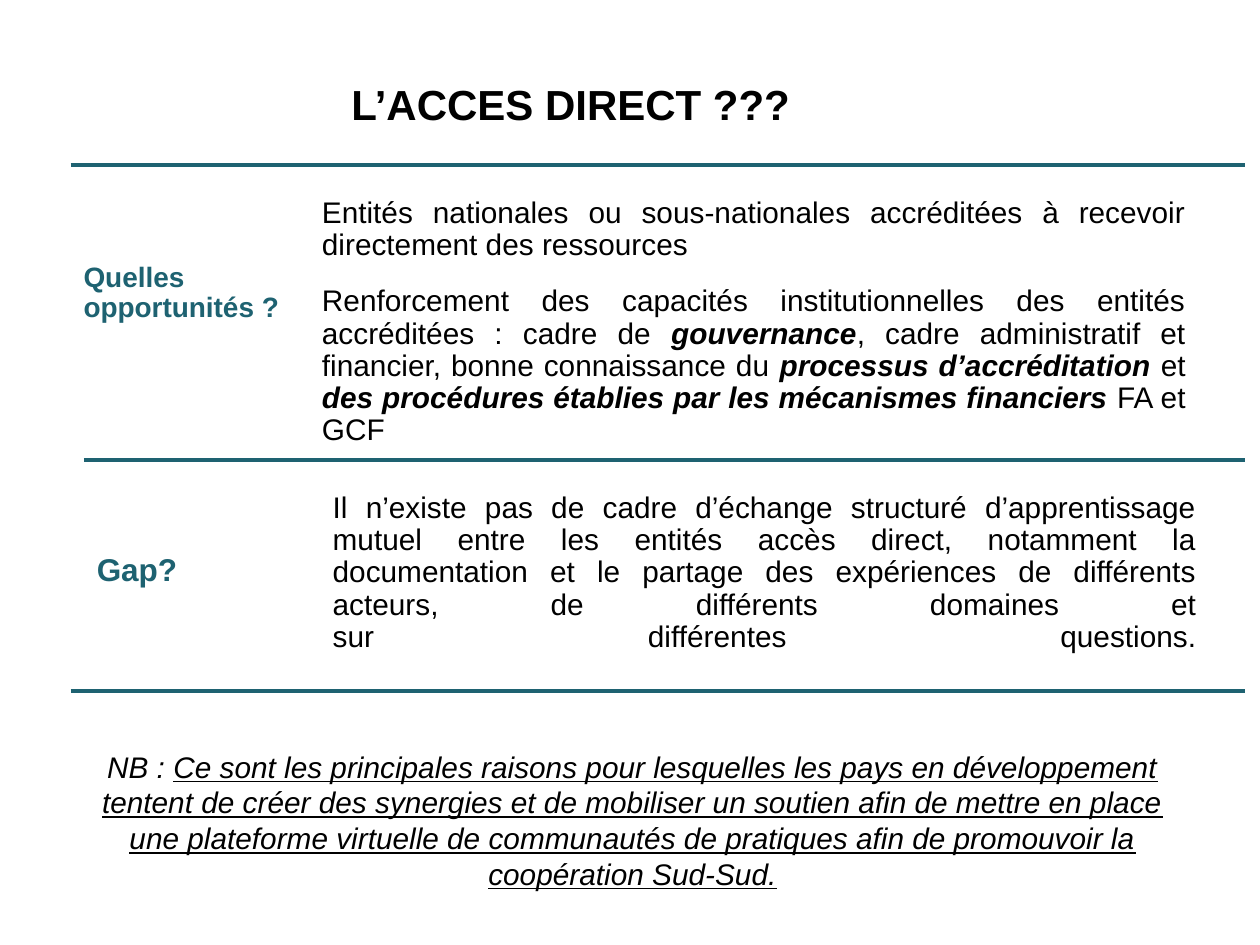
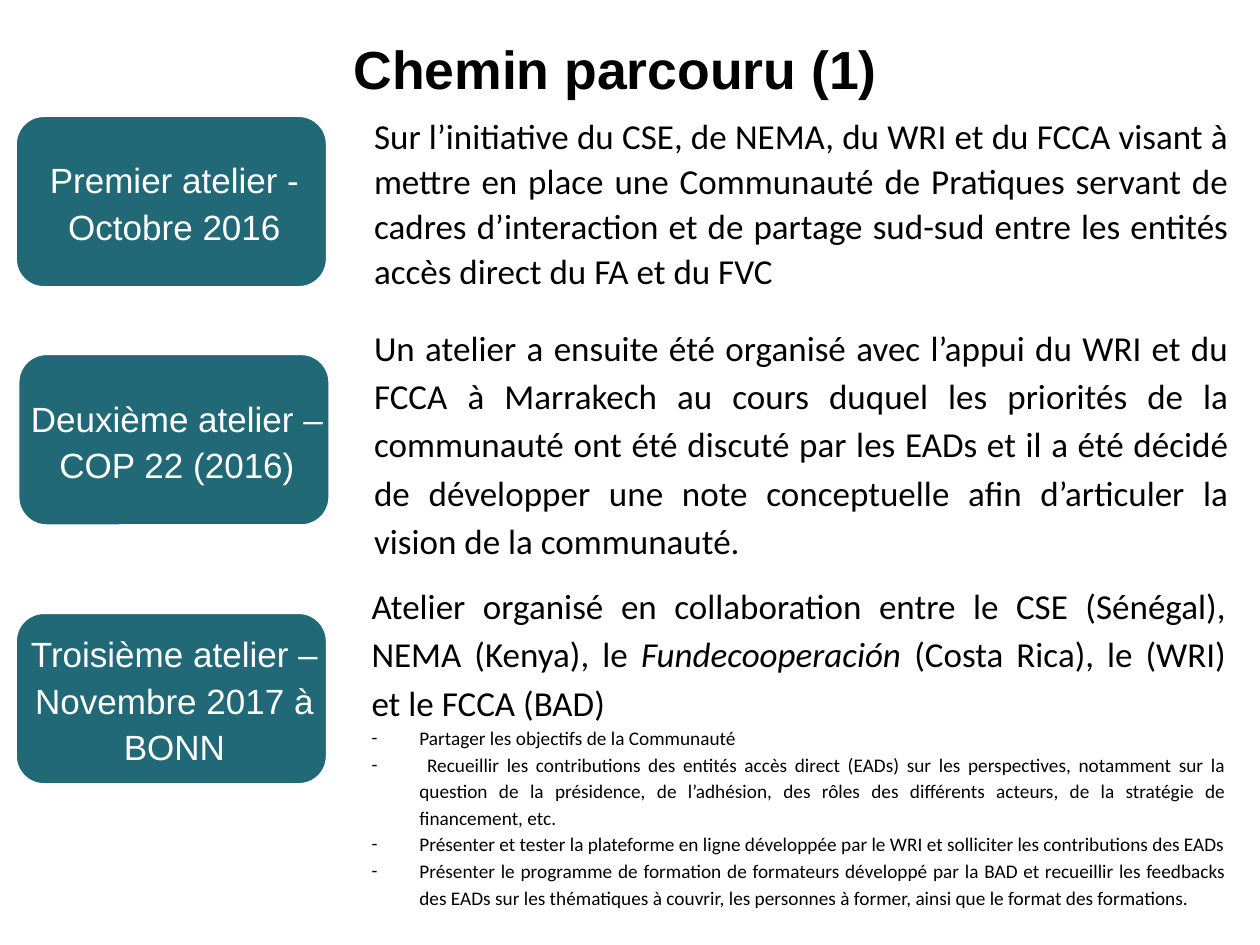
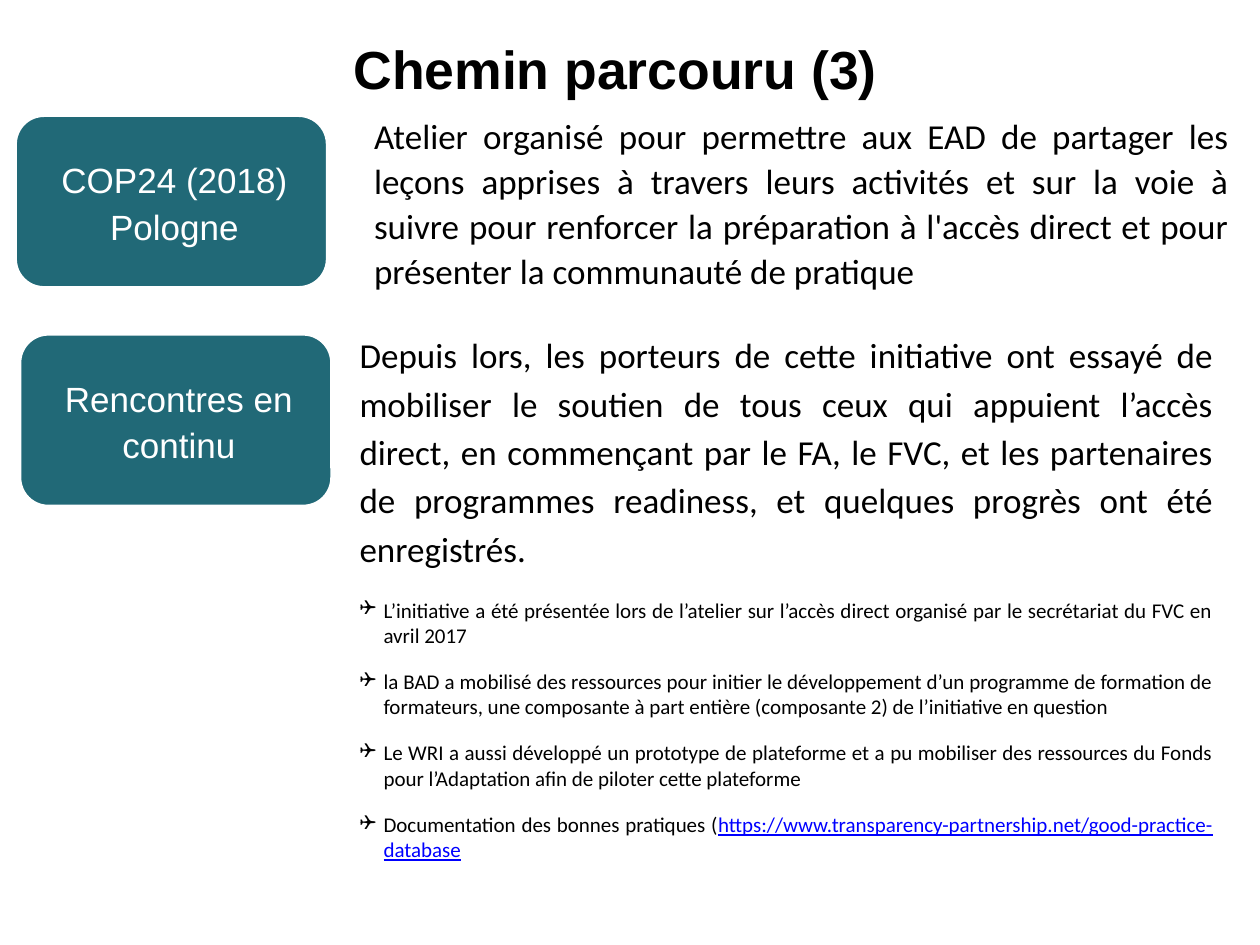
from lxml.etree import SubElement
from pptx import Presentation
from pptx.dml.color import RGBColor
from pptx.enum.shapes import MSO_CONNECTOR, MSO_SHAPE
from pptx.enum.text import MSO_ANCHOR, MSO_AUTO_SIZE, PP_ALIGN
from pptx.oxml.ns import qn
from pptx.util import Inches, Pt

# Shared style
BLACK, WHITE, LINK = "000000", "FFFFFF", "0000FF"
RULE, BLOCK = "1E6271", "216977"
HEADING_FONT, BODY_FONT, MARK_FONT = "Arial", "Calibri", "Wingdings"
COLUMNS, ROWS = 100, 75
STRONG = dict(bold=True, italic=True)


def color(hex_text):
    return RGBColor.from_string(hex_text)


def write(para, text, font=HEADING_FONT, size=17, fill=BLACK,
          bold=False, italic=False, underline=False):
    """Add text to a paragraph; a newline becomes a line break."""
    for index, piece in enumerate(text.split("\n")):
        if index:
            para.add_line_break()
        if piece:
            span = para.add_run()
            span.text = piece
            span.font.name, span.font.size = font, Pt(size)
            span.font.color.rgb = color(fill)
            span.font.bold, span.font.italic = bold, italic
            span.font.underline = underline


def add_bullet(para, mark, indent, font):
    properties = para._p.get_or_add_pPr()
    properties.set("marL", str(Inches(indent)))
    properties.set("indent", str(-Inches(indent)))
    SubElement(properties, qn("a:buFont")).set("typeface", font)
    SubElement(properties, qn("a:buChar")).set("char", mark)


class SlideBuilder:
    """Holds the deck, its grid and the slide being built."""

    def __init__(self):
        self.deck = Presentation()
        self.deck.slide_width, self.deck.slide_height = Inches(10), Inches(7.5)
        self.page = None

    def column(self, count):
        return round(self.deck.slide_width * count / COLUMNS)

    def row(self, count):
        return round(self.deck.slide_height * count / ROWS)

    def area(self, left, top, width, height):
        return self.column(left), self.row(top), self.column(width), self.row(height)

    def frame(self, shape, anchor=MSO_ANCHOR.TOP, insets=(0.1, 0.05)):
        frame = shape.text_frame
        frame.word_wrap = True
        frame.auto_size = MSO_AUTO_SIZE.NONE
        frame.vertical_anchor = anchor
        frame.margin_left = frame.margin_right = Inches(insets[0])
        frame.margin_top = frame.margin_bottom = Inches(insets[1])
        return frame

    def paragraph(self, frame, content, align=PP_ALIGN.JUSTIFY, spacing=1.0,
                  before=0, after=0, bullet=None, **style):
        """Content is a string or a list of (text, format changes)."""
        para = frame.paragraphs[0]
        if para.runs:
            para = frame.add_paragraph()
        para.alignment, para.line_spacing = align, spacing
        para.space_before, para.space_after = Pt(before), Pt(after)
        if bullet:
            add_bullet(para, *bullet)
        spans = [(content, {})] if isinstance(content, str) else content
        for text, changes in spans:
            write(para, text, **{**style, **changes})

    def title(self, text, place, size, align):
        self.page = self.deck.slides.add_slide(self.deck.slide_layouts[5])
        title = self.page.shapes.title
        title.left, title.top, title.width, title.height = self.area(*place)
        self.paragraph(self.frame(title), text, align, Pt(38.4), size=size, bold=True)

    def text(self, place, content, anchor=MSO_ANCHOR.TOP, insets=(0.1, 0.05), **style):
        box = self.page.shapes.add_textbox(*self.area(*place))
        frame = self.frame(box, anchor, insets)
        self.paragraph(frame, content, **style)
        return frame

    def panel(self, place, content, anchor=MSO_ANCHOR.TOP, inset=0.1, **style):
        """Text in a plain outline without fill or border."""
        left, top, width, height = self.area(*place)
        outline = self.page.shapes.build_freeform(left, top)
        outline.add_line_segments([(left + width, top), (left + width, top + height),
                                   (left, top + height)])
        shape = outline.convert_to_shape()
        shape.shadow.inherit = False
        shape.fill.background()
        shape.line.fill.background()
        frame = self.frame(shape, anchor, (inset, inset))
        self.paragraph(frame, content, spacing=0.9, **style)

    def rule(self, left, top, right=98.8):
        line = self.page.shapes.add_connector(
            MSO_CONNECTOR.STRAIGHT, self.column(left), self.row(top),
            self.column(right), self.row(top))
        line.line.color.rgb, line.line.width = color(RULE), Pt(2)
        SubElement(line._element.spPr, qn("a:effectLst"))

    def block(self, left, top, label):
        shape = self.page.shapes.add_shape(
            MSO_SHAPE.ROUNDED_RECTANGLE, *self.area(left, top, 24.8, 13.7))
        shape.shadow.inherit = False
        shape.fill.solid()
        shape.fill.fore_color.rgb = color(BLOCK)
        shape.line.color.rgb, shape.line.width = color(WHITE), Pt(2)
        self.text((left + 0.45, top + 0.6, 24.4, 12.4), label, MSO_ANCHOR.MIDDLE,
                  (0.05, 0.03), align=PP_ALIGN.CENTER, spacing=1.1, size=20, fill=WHITE)

    def story(self, left, top, height, content, width=69.8, **style):
        return self.text((left, top, width, height), content,
                         font=BODY_FONT, size=20, **style)

    def bullets(self, frame, items, **style):
        for item in items:
            self.paragraph(frame, item, font=BODY_FONT, **style)

    def workshop_title(self, number):
        self.title(f"Chemin parcouru ({number})", (26.4, 2.15, 44.2, 7.8),
                   30.6, PP_ALIGN.RIGHT)


def direct_access(builder):
    builder.title("L’ACCES DIRECT ???", (26.4, 4.4, 37.8, 5.8), 24, PP_ALIGN.CENTER)
    for left, top in ((5.6, 13.1), (6.65, 36.5), (5.6, 54.85)):
        builder.rule(left, top)

    # Questions on the left
    question = dict(fill=RULE, bold=True)
    builder.panel((5.65, 19.9, 19.2, 14.8), "Quelles opportunités ? ", size=16, **question)
    builder.panel((6.7, 43, 9.7, 5.1), "Gap?", size=18, align=PP_ALIGN.LEFT, **question)

    # Answers on the right
    answers = [
        (24.85, 15.6, 5.3, "Entités nationales ou sous-nationales accréditées à recevoir "
                           "directement des ressources"),
        (24.85, 21.75, 14.7, [
            ("Renforcement des capacités institutionnelles des entités accréditées : "
             "cadre de ", {}),
            ("gouvernance", STRONG),
            (", cadre administratif et financier, bonne connaissance du ", {}),
            ("processus d’accréditation ", STRONG),
            ("et ", {}),
            ("des procédures établies par les mécanismes financiers", STRONG),
            (" FA et GCF", {})]),
        (25.7, 39.15, 15.7, "Il n’existe pas de cadre d’échange structuré d’apprentissage "
                            "mutuel entre les entités accès direct, notamment la "
                            "documentation et le partage des expériences de différents "
                            "acteurs, de différents domaines et\n"
                            "sur différentes questions.\n"),
    ]
    for left, top, height, content in answers:
        builder.panel((left, top, 69.95, height), content, MSO_ANCHOR.MIDDLE, 0.07)

    # Closing note
    builder.text((5.6, 58.9, 89.2, 12.5), [
        ("NB : ", {}),
        ("Ce sont les principales raisons pour lesquelles les pays en développement "
         "tentent de créer des synergies et de mobiliser un soutien afin de mettre en "
         "place une plateforme virtuelle de communautés de pratiques afin de promouvoir "
         "la coopération Sud-Sud.", dict(underline=True))],
        align=PP_ALIGN.CENTER, italic=True)


def first_workshops(builder):
    builder.workshop_title(1)
    builder.block(1.2, 9.15, "Premier atelier - Octobre 2016")
    builder.story(28.7, 8.4, 15.4,
                  "Sur l’initiative du CSE, de NEMA, du WRI et du FCCA visant à mettre en "
                  "place une Communauté de Pratiques servant de cadres d’interaction et de "
                  "partage sud-sud entre les entités accès direct du FA et du FVC",
                  spacing=1.07)
    builder.block(1.4, 28.05, "Deuxième atelier – COP 22 (2016)")
    builder.story(28.7, 24.9, 20.1,
                  "Un atelier a ensuite été organisé avec l’appui du WRI et du FCCA à "
                  "Marrakech au cours duquel les priorités de la communauté ont été discuté "
                  "par les EADs et il a été décidé de développer une note conceptuelle afin "
                  "d’articuler la vision de la communauté. ", spacing=1.15)
    builder.block(1.2, 48.6, "Troisième atelier – Novembre 2017 à BONN")
    frame = builder.story(28.5, 45.4, 31.4, [
        ("Atelier organisé en collaboration entre le CSE (Sénégal), NEMA (Kenya), le ", {}),
        ("Fundecooperación", dict(italic=True)),
        (" (Costa Rica), le (WRI) et le FCCA (BAD)", {})], spacing=1.15)
    builder.bullets(frame, [
        "Partager les objectifs de la Communauté",
        " Recueillir les contributions des entités accès direct (EADs) sur les "
        "perspectives, notamment sur la question de la présidence, de l’adhésion, des "
        "rôles des différents acteurs, de la stratégie de financement, etc.",
        "Présenter et tester la plateforme en ligne développée par le WRI et solliciter "
        "les contributions des EADs",
        "Présenter le programme de formation de formateurs développé par la BAD et "
        "recueillir les feedbacks des EADs sur les thématiques à couvrir, les personnes "
        "à former, ainsi que le format des formations. ",
    ], size=11, spacing=1.15, bullet=("-", 0.38, BODY_FONT))


def later_meetings(builder):
    builder.workshop_title(3)
    builder.block(1.2, 9.15, "COP24 (2018) Pologne")
    builder.story(28.7, 8.4, 15.4,
                  "Atelier organisé pour permettre aux EAD de partager les leçons apprises "
                  "à travers leurs activités et sur la voie à suivre pour renforcer la "
                  "préparation à l'accès direct et pour présenter la communauté de pratique ",
                  spacing=1.07)
    builder.block(1.55, 26.5, "Rencontres en continu")
    frame = builder.story(27.55, 25.5, 43.8,
                          "Depuis lors, les porteurs de cette initiative ont essayé de "
                          "mobiliser le soutien de tous ceux qui appuient l’accès direct, en "
                          "commençant par le FA, le FVC, et les partenaires de programmes "
                          "readiness, et quelques progrès ont été enregistrés. ",
                          width=69.72, spacing=1.15, before=12, after=10)
    builder.bullets(frame, [
        "L’initiative a été présentée lors de l’atelier sur l’accès direct organisé par "
        "le secrétariat du FVC en avril 2017 ",
        "la BAD a mobilisé des ressources pour initier le développement d’un programme de "
        "formation de formateurs, une composante à part entière (composante 2) de "
        "l’initiative en question",
        "Le WRI a aussi développé un prototype de plateforme et a pu mobiliser des "
        "ressources du Fonds pour l’Adaptation afin de piloter cette plateforme",
        [("Documentation des bonnes pratiques (", {}),
         ("https://www.transparency-partnership.net/good-practice-database",
          dict(fill=LINK, underline=True))],
    ], size=12, before=6, after=6, bullet=("❑", 0.19, MARK_FONT))


def main():
    builder = SlideBuilder()
    for build in (direct_access, first_workshops, later_meetings):
        build(builder)
    builder.deck.save("out.pptx")


if __name__ == "__main__":
    main()
